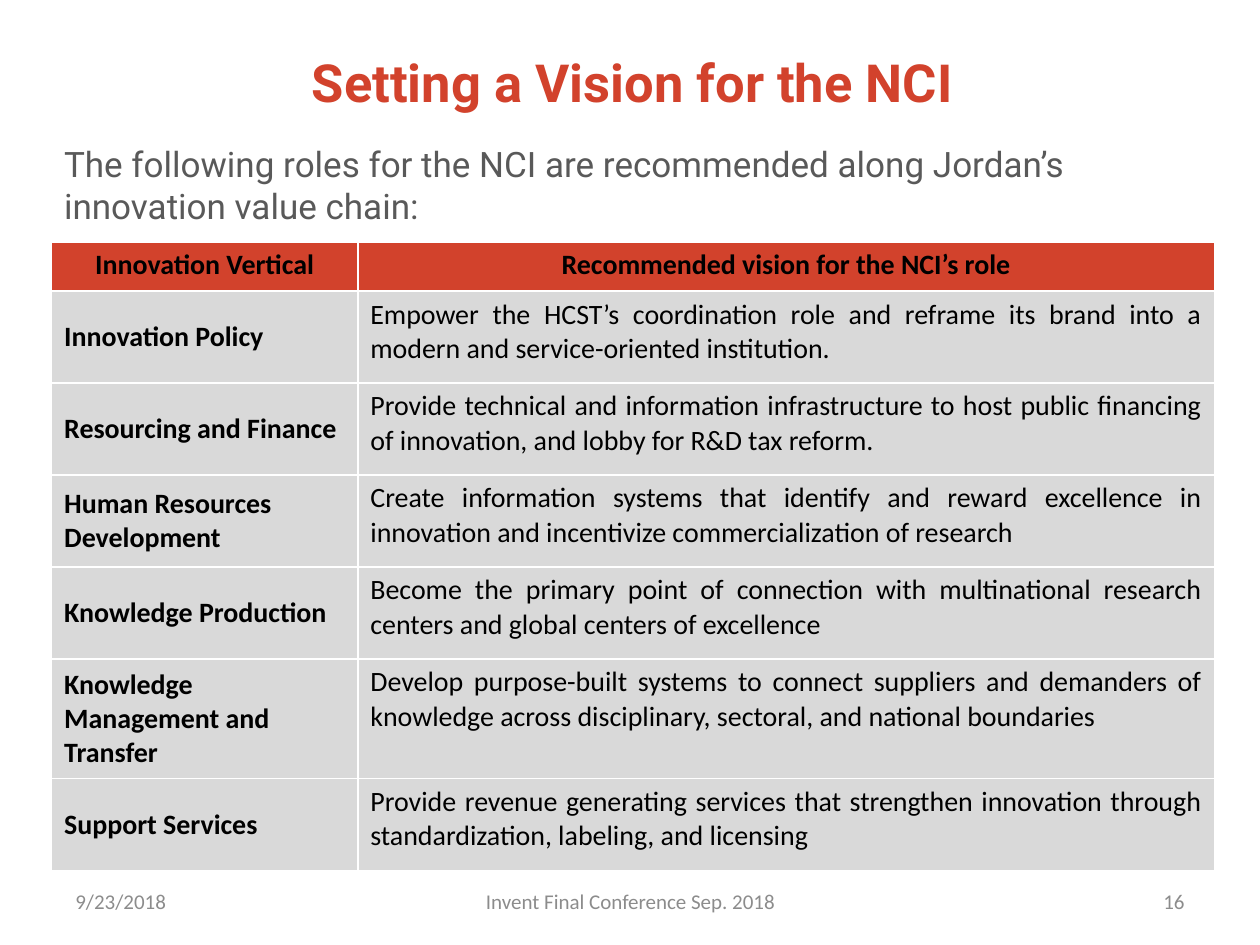
from dataclasses import dataclass

from lxml.etree import SubElement
from pptx import Presentation
from pptx.dml.color import RGBColor
from pptx.enum.text import MSO_ANCHOR as ANCHOR, PP_ALIGN as ALIGN
from pptx.oxml.ns import qn
from pptx.util import Emu, Pt

PX = 9144  # 100 px to the inch
COLORS = {"red": "D2422C", "body": "595959", "black": "000000",
          "cell": "D9D9D9", "footer": "8C8C8C", "white": "FFFFFF"}


@dataclass
class Style:
    size: int
    font: str
    color: str
    bold: bool = False
    align: ALIGN = ALIGN.LEFT
    anchor: ANCHOR = ANCHOR.TOP
    before: int = 0


@dataclass
class Box:
    left: int
    top: int
    width: int
    height: int

    def emu(self) -> list[Emu]:
        return [Emu(v * PX) for v in (self.left, self.top, self.width, self.height)]


def rgb(name: str) -> RGBColor:
    return RGBColor.from_string(COLORS[name])


def write(tf, text: str, style: Style) -> None:
    p = tf.paragraphs[0]
    p.alignment = style.align
    p.space_before = Pt(style.before)
    r = p.add_run()
    r.text = text
    for name, value in {"size": Pt(style.size), "name": style.font,
                        "bold": style.bold}.items():
        setattr(r.font, name, value)
    r.font.color.rgb = rgb(style.color)


def add_text(slide, box: Box, text: str, style: Style) -> None:
    tf = slide.shapes.add_textbox(*box.emu()).text_frame
    tf.word_wrap = True
    tf.vertical_anchor = style.anchor
    write(tf, text, style)


def set_borders(cell) -> None:
    tc_pr = cell._tc.get_or_add_tcPr()
    for i, side in enumerate(("a:lnL", "a:lnR", "a:lnT", "a:lnB")):
        ln = SubElement(tc_pr, qn(side), w=str(Pt(1)))
        fill = SubElement(ln, qn("a:solidFill"))
        SubElement(fill, qn("a:srgbClr"), val=COLORS["white"])
        tc_pr.remove(ln)
        tc_pr.insert(i, ln)  # borders come before the fill


def fill_cell(cell, text: str, style: Style, color: str, bordered: bool) -> None:
    cell.fill.solid()
    cell.fill.fore_color.rgb = rgb(color)
    cell.vertical_anchor = style.anchor
    write(cell.text_frame, text, style)
    if bordered:
        set_borders(cell)


TITLE = Style(30, "Roboto", "red", True, ALIGN.CENTER)
INTRO = Style(20, "Roboto", "body", before=6)
HEADER = Style(16, "Calibri", "black", True, ALIGN.CENTER)
VERTICAL = Style(16, "Calibri", "black", True, anchor=ANCHOR.MIDDLE)
ROLE = Style(16, "Calibri", "black", align=ALIGN.JUSTIFY)

COLUMNS = (243, 680)
HEADER_HEIGHT, ROW_HEIGHT, TALL_ROW_HEIGHT = 39, 73, 95
HEADINGS = ("Innovation Vertical", "Recommended vision for the NCI’s role")
ROLES = (
    ("Innovation Policy",
     "Empower the HCST’s coordination role and reframe its brand into a modern "
     "and service-oriented institution."),
    ("Resourcing and Finance",
     "Provide technical and information infrastructure to host public financing "
     "of innovation, and lobby for R&D tax reform."),
    ("Human Resources Development",
     "Create information systems that identify and reward excellence in "
     "innovation and incentivize commercialization of research"),
    ("Knowledge Production",
     "Become the primary point of connection with multinational research "
     "centers and global centers of excellence"),
    ("Knowledge Management and Transfer",
     "Develop purpose-built systems to connect suppliers and demanders of "
     "knowledge across disciplinary, sectoral, and national boundaries"),
    ("Support Services",
     "Provide revenue generating services that strengthen innovation through "
     "standardization, labeling, and licensing"),
)
FOOTERS = (
    (Box(50, 695, 233, 40), "9/23/2018", ALIGN.LEFT),
    (Box(342, 695, 317, 40), "Invent Final Conference Sep. 2018", ALIGN.CENTER),
    (Box(717, 695, 233, 40), "16", ALIGN.RIGHT),
)


def add_roles_table(slide) -> None:
    heights = [HEADER_HEIGHT] + [
        TALL_ROW_HEIGHT if name.startswith("Knowledge Management") else ROW_HEIGHT
        for name, _ in ROLES]
    box = Box(41, 192, sum(COLUMNS), sum(heights))
    table = slide.shapes.add_table(len(heights), len(COLUMNS), *box.emu()).table
    for column, width in zip(table.columns, COLUMNS):
        column.width = Emu(width * PX)
    for row, height in zip(table.rows, heights):
        row.height = Emu(height * PX)
    for c, heading in enumerate(HEADINGS):
        fill_cell(table.cell(0, c), heading, HEADER, "red", False)
    for i, texts in enumerate(ROLES, start=1):
        for c, (text, style) in enumerate(zip(texts, (VERTICAL, ROLE))):
            fill_cell(table.cell(i, c), text, style, "cell", True)


def main() -> None:
    prs = Presentation()
    prs.slide_width, prs.slide_height = Emu(1000 * PX), Emu(750 * PX)
    slide = prs.slides.add_slide(prs.slide_layouts[5])

    # Title and introduction
    title = slide.shapes.title
    title.left, title.top, title.width, title.height = Box(40, 35, 924, 81).emu()
    title.text_frame.vertical_anchor = TITLE.anchor
    write(title.text_frame, "Setting a Vision for the NCI", TITLE)
    add_text(slide, Box(41, 108, 932, 93),
             "The following roles for the NCI are recommended along Jordan’s "
             "innovation value chain:", INTRO)

    # Roles along the value chain
    add_roles_table(slide)

    # Footer
    for box, text, align in FOOTERS:
        add_text(slide, box, text, Style(12, "Calibri", "footer", align=align,
                                         anchor=ANCHOR.MIDDLE))

    prs.save("out.pptx")


if __name__ == "__main__":
    main()
